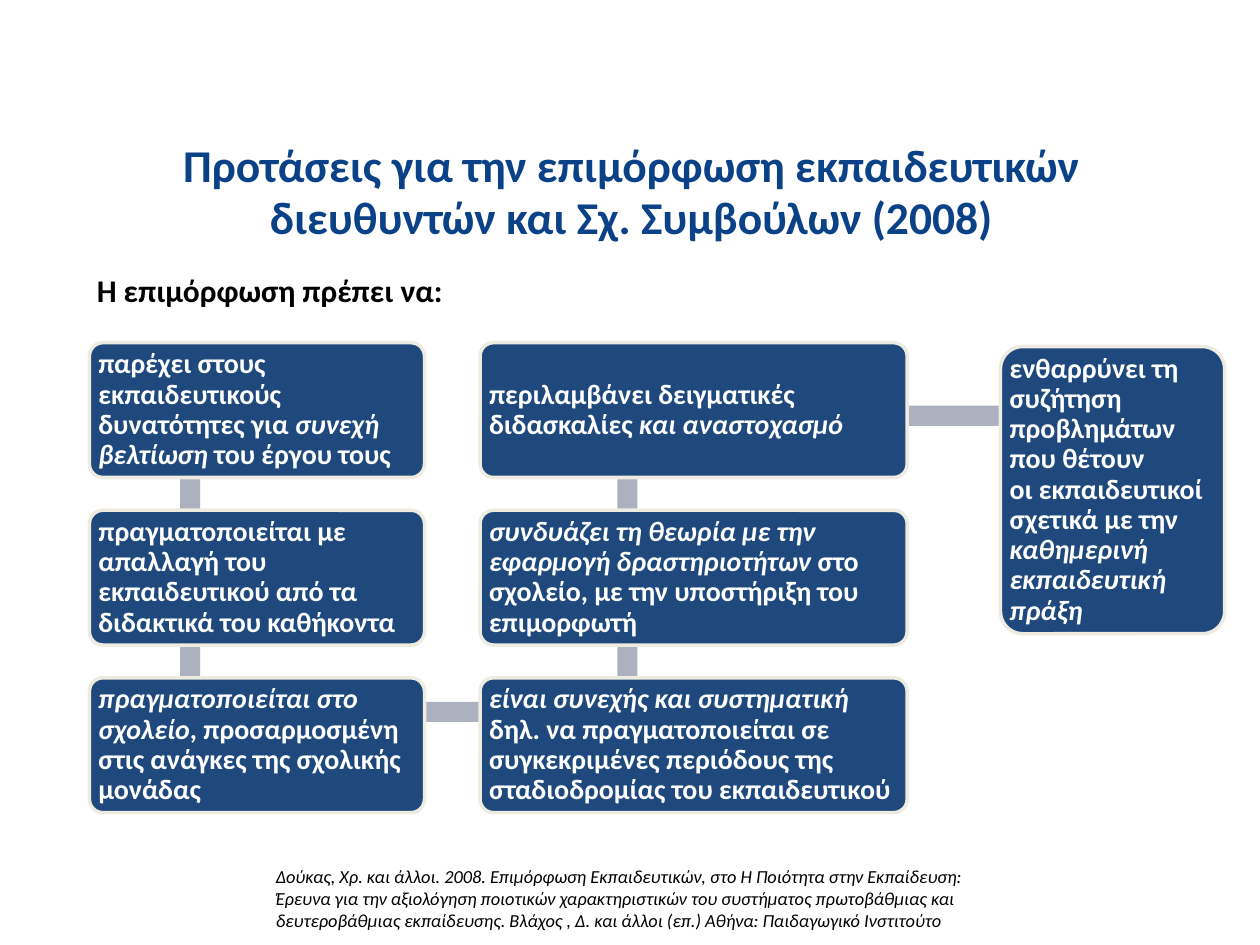
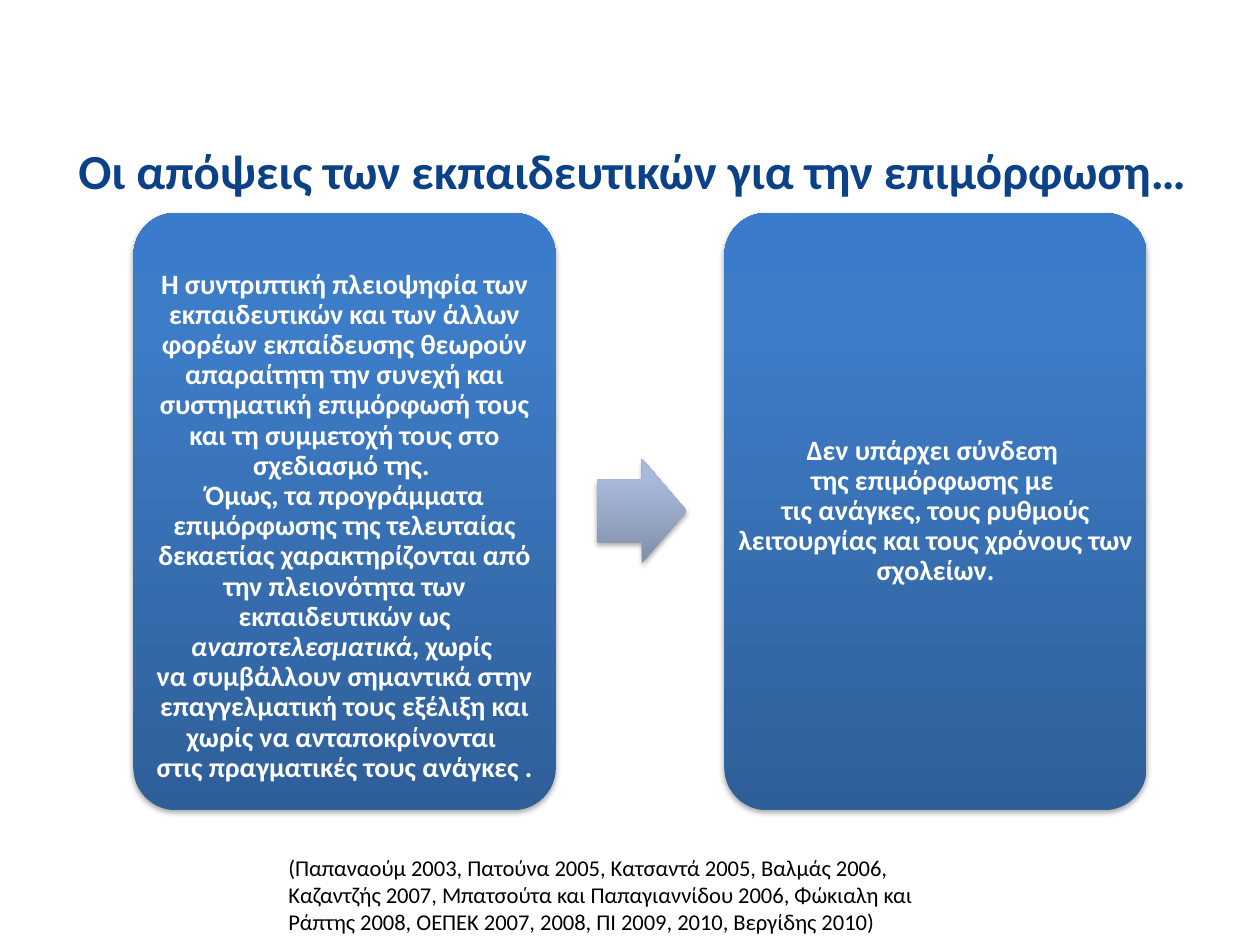
from lxml import etree
from pptx import Presentation
from pptx.dml.color import RGBColor
from pptx.enum.shapes import MSO_SHAPE
from pptx.enum.text import MSO_ANCHOR, PP_ALIGN
from pptx.util import Pt

RECT = MSO_SHAPE.RECTANGLE
ROUND = MSO_SHAPE.ROUNDED_RECTANGLE
ARROW = MSO_SHAPE.RIGHT_ARROW
TOP, MIDDLE = MSO_ANCHOR.TOP, MSO_ANCHOR.MIDDLE
LEFT, CENTER = PP_ALIGN.LEFT, PP_ALIGN.CENTER

PX = 9144
FONT = "Calibri"
TITLE, BLACK, WHITE = "0A4187", "000000", "FFFFFF"
NAVY, CREAM, GREY = "1F497D", "EEECE1", "ACB1BF"
BLUES = ("2F5F99", "3D7CC7", "3A7CCB")
STEELS = ("818FA8", "A7B9DA", "A7BADC")
NS = 'xmlns:a="http://schemas.openxmlformats.org/drawingml/2006/main"'


def write(shape, text, size, color, bold=False, align=LEFT, anchor=TOP,
          space=1.0, pad=(10, 5, 10, 5)):
    frame = shape.text_frame
    frame.word_wrap = True
    frame.vertical_anchor = anchor
    (frame.margin_left, frame.margin_top,
     frame.margin_right, frame.margin_bottom) = [n * PX for n in pad]
    para = frame.paragraphs[0]
    para.alignment = align
    para.line_spacing = space
    para.font.name = FONT
    para.font.size = Pt(size)
    para.font.bold = bold
    para.font.color.rgb = RGBColor.from_string(color)
    for i, part in enumerate(text.split("*")):
        for j, line in enumerate(part.split("\n")):
            if j:
                para.add_line_break()
            if line:
                run = para.add_run()
                run.text = line
                if i % 2:
                    run.font.italic = True


def draw(slide, kind, area, fill, edge=None):
    shape = slide.shapes.add_shape(kind, *[n * PX for n in area])
    shape.shadow.inherit = False
    if edge:
        shape.line.color.rgb = RGBColor.from_string(edge)
        shape.line.width = Pt(2)
    else:
        shape.line.fill.background()
    if isinstance(fill, str):
        shape.fill.solid()
        shape.fill.fore_color.rgb = RGBColor.from_string(fill)
    else:
        stops = "".join(
            f'<a:gs pos="{pos}"><a:srgbClr val="{tone}"/></a:gs>'
            for pos, tone in zip((0, 80000, 100000), fill))
        props = shape._element.spPr
        props.insert(2, etree.fromstring(
            f'<a:gradFill {NS} rotWithShape="1"><a:gsLst>{stops}</a:gsLst>'
            '<a:lin ang="16200000" scaled="0"/></a:gradFill>'))
        props[-1].append(etree.fromstring(
            f'<a:outerShdw {NS} blurRad="40000" dist="23000" dir="5400000" '
            'rotWithShape="0"><a:srgbClr val="000000"><a:alpha val="35000"/>'
            '</a:srgbClr></a:outerShdw>'))
    if kind == ROUND:
        shape.adjustments[0] = 0.1
    return shape


deck = Presentation()
deck.slide_width = 1000 * PX
deck.slide_height = 750 * PX

pages = [
    ("Προτάσεις για την επιμόρφωση εκπαιδευτικών διευθυντών και Σχ. Συμβούλων (2008)",
     110, 26, 0.95, (209, 682, 575, 63), 10.5,
     "*Δούκας, Χρ. και άλλοι. 2008. Επιμόρφωση Εκπαιδευτικών, στο Η Ποιότητα στην Εκπαίδευση: "
     "Έρευνα για την αξιολόγηση ποιοτικών χαρακτηριστικών του συστήματος πρωτοβάθμιας και "
     "δευτεροβάθμιας εκπαίδευσης. Βλάχος , Δ. και άλλοι (επ.) Αθήνα: Παιδαγωγικό Ινστιτούτο*"),
    ("Οι απόψεις των εκπαιδευτικών για την επιμόρφωση…",
     63, 28, 1.0, (219, 673, 541, 77), 12.9,
     "(Παπαναούμ 2003, Πατούνα 2005, Κατσαντά 2005, Βαλμάς 2006, Καζαντζής 2007, "
     "Μπατσούτα και Παπαγιαννίδου 2006, Φώκιαλη και Ράπτης 2008, ΟΕΠΕΚ 2007, 2008, "
     "ΠΙ 2009, 2010, Βεργίδης 2010)"),
]
slides = []
for title, high, size, space, area, small, source in pages:
    slide = deck.slides.add_slide(deck.slide_layouts[6])
    box = slide.shapes.add_textbox(50 * PX, 107 * PX, 903 * PX, high * PX)
    write(box, title, size, TITLE, True, CENTER, space=space)
    box = slide.shapes.add_textbox(*[n * PX for n in area])
    write(box, source, small, BLACK)
    slides.append(slide)
needs, views = slides

lead = needs.shapes.add_textbox(67 * PX, 210 * PX, 500 * PX, 40 * PX)
write(lead, "Η επιμόρφωση πρέπει να:", 18, BLACK, True)

for left in (143, 490):
    for top in (299, 432):
        draw(needs, RECT, (left, top, 16, 132), GREY)
for left, top in ((151, 557), (495, 322)):
    draw(needs, RECT, (left, top, 340, 16), GREY)

columns = [
    (71, 272, 266, 107, [
        "παρέχει στους εκπαιδευτικούς δυνατότητες για *συνεχή βελτίωση *του έργου τους",
        "πραγματοποιείται με απαλλαγή του εκπαιδευτικού από τα διδακτικά του καθήκοντα",
        "*πραγματοποιείται στο σχολείο*, προσαρμοσμένη στις ανάγκες της σχολικής μονάδας"]),
    (381, 272, 339, 107, [
        "περιλαμβάνει δειγματικές διδασκαλίες *και αναστοχασμό*",
        "*συνδυάζει τη θεωρία με την εφαρμογή δραστηριοτήτων *στο σχολείο, "
        "με την υποστήριξη του επιμορφωτή",
        "*είναι συνεχής και συστηματική *δηλ. να πραγματοποιείται σε συγκεκριμένες "
        "περιόδους της σταδιοδρομίας του εκπαιδευτικού"]),
    (794, 275, 178, 228, [
        "ενθαρρύνει τη συζήτηση προβλημάτων που θέτουν \nοι εκπαιδευτικοί "
        "σχετικά με την *καθημερινή εκπαιδευτική πράξη*"]),
]
for left, top, wide, high, texts in columns:
    pad = 7 - round(0.029 * min(wide, high))
    for row, text in enumerate(texts):
        card = draw(needs, ROUND, (left, top + row * 133, wide, high), NAVY, CREAM)
        write(card, text, 16, WHITE, True, anchor=MIDDLE, space=0.9, pad=(pad,) * 4)

panels = [
    (106, 24,
     "Η συντριπτική πλειοψηφία των εκπαιδευτικών και των άλλων φορέων εκπαίδευσης θεωρούν "
     "απαραίτητη την συνεχή και συστηματική επιμόρφωσή τους και τη συμμετοχή τους στο "
     "σχεδιασμό της. \nΌμως, τα προγράμματα επιμόρφωσης της τελευταίας δεκαετίας "
     "χαρακτηρίζονται από την πλειονότητα των εκπαιδευτικών ως *αναποτελεσματικά*, χωρίς \n"
     "να συμβάλλουν σημαντικά στην επαγγελματική τους εξέλιξη και χωρίς να ανταποκρίνονται \n"
     "στις πραγματικές τους ανάγκες ."),
    (575, 0,
     "Δεν υπάρχει σύνδεση \nτης επιμόρφωσης με \nτις ανάγκες, τους ρυθμούς λειτουργίας "
     "και τους χρόνους των σχολείων."),
]
for left, top, text in panels:
    panel = draw(views, ROUND, (left, 169, 335, 474), BLUES)
    write(panel, text, 16, WHITE, True, CENTER, MIDDLE, 0.9, (0, top, 0, 0))

arrow = draw(views, ARROW, (474, 364, 71, 83), STEELS)
arrow.adjustments[0] = 0.6
arrow.adjustments[1] = 0.5

deck.save("out.pptx")
